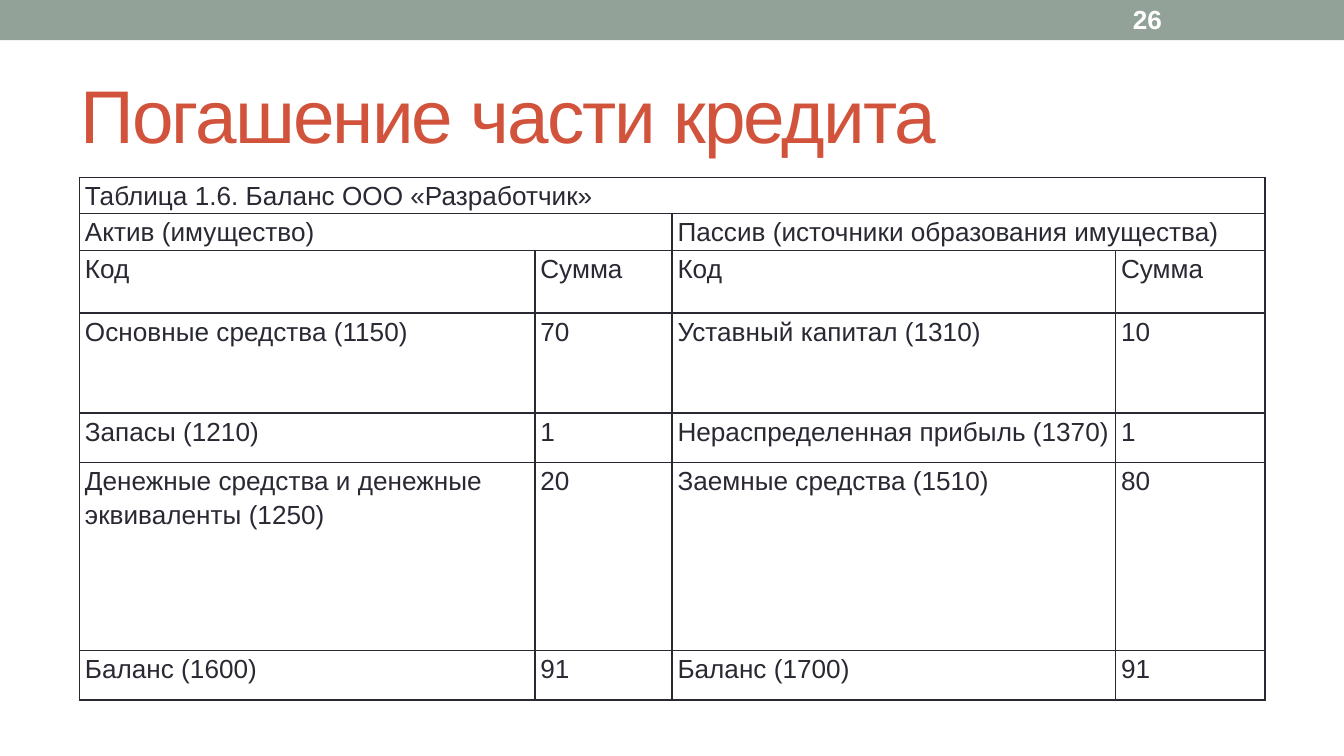
from lxml import etree
from pptx import Presentation
from pptx.dml.color import RGBColor
from pptx.enum.shapes import MSO_SHAPE
from pptx.enum.text import MSO_ANCHOR
from pptx.oxml.ns import qn
from pptx.util import Pt

RECTANGLE = MSO_SHAPE.RECTANGLE
MIDDLE = MSO_ANCHOR.MIDDLE
INK = "292934"


def color(value):
    return RGBColor.from_string(value)


def write(frame, text, size, ink, bold=False):
    para = frame.paragraphs[0]
    span = para.add_run()
    span.text = text
    formats = {"name": "Arial", "size": Pt(size), "bold": bold}
    for name, value in formats.items():
        setattr(span.font, name, value)
    span.font.color.rgb = color(ink)
    return para, span


deck = Presentation()
deck.slide_width, deck.slide_height = Pt(720), Pt(405)
page = deck.slides.add_slide(deck.slide_layouts[6])

band = page.shapes.add_shape(RECTANGLE, 0, 0, Pt(720), Pt(21.6))
band.shadow.inherit = False
band.fill.solid()
band.fill.fore_color.rgb = color("93A299")
band.line.fill.background()

labels = [
    ("Погашение части кредита", 36, 31.7, 648, 58.3, 40, "D2533C", False, -100),
    ("26", 599.8, 0.7, 84.2, 19.4, 14, "FFFFFF", True, 0),
]
for text, left, top, width, height, size, ink, bold, spacing in labels:
    box = page.shapes.add_textbox(Pt(left), Pt(top), Pt(width), Pt(height))
    box.text_frame.word_wrap = True
    box.text_frame.vertical_anchor = MIDDLE
    para, span = write(box.text_frame, text, size, ink, bold)
    span.font._element.set("spc", str(spacing))

rows = [
    ["Таблица 1.6. Баланс ООО «Разработчик»", "", "", ""],
    ["Актив (имущество)", "", "Пассив (источники образования имущества)", ""],
    ["Код", "Сумма", "Код", "Сумма"],
    ["Основные средства (1150)", "70", "Уставный капитал (1310)", "10"],
    ["Запасы (1210)", "1", "Нераспределенная прибыль (1370)", "1"],
    ["Денежные средства и денежные эквиваленты (1250)", "20", "Заемные средства (1510)", "80"],
    ["Баланс (1600)", "91", "Баланс (1700)", "91"],
]
widths = [244, 73.5, 237.6, 79.9]
heights = [17.6, 19.8, 33.6, 53.5, 26.6, 100.8, 26.6]
table = page.shapes.add_table(
    len(rows), len(widths), Pt(42.6), Pt(95), Pt(sum(widths)), Pt(sum(heights))
).table
table.first_row = table.horz_banding = False
for column, width in zip(table.columns, widths):
    column.width = Pt(width)
for row, height in zip(table.rows, heights):
    row.height = Pt(height)
for row, first, last in [(0, 0, 3), (1, 0, 1), (1, 2, 3)]:
    table.cell(row, first).merge(table.cell(row, last))

margins = {"margin_left": Pt(2.9), "margin_right": Pt(2.9), "margin_top": 0, "margin_bottom": 0}
for row, texts in enumerate(rows):
    for column, text in enumerate(texts):
        cell = table.cell(row, column)
        for name, value in margins.items():
            setattr(cell, name, value)
        properties = cell._tc.get_or_add_tcPr()
        for side in ("a:lnL", "a:lnR", "a:lnT", "a:lnB"):
            border = etree.SubElement(properties, qn(side), w=str(Pt(1)))
            fill = etree.SubElement(border, qn("a:solidFill"))
            etree.SubElement(fill, qn("a:srgbClr"), val=INK)
        cell.fill.background()
        if text:
            para, span = write(cell.text_frame, text, 14, INK)
            para.line_spacing = 1.15
            para.space_after = Pt(10)

deck.save("out.pptx")
